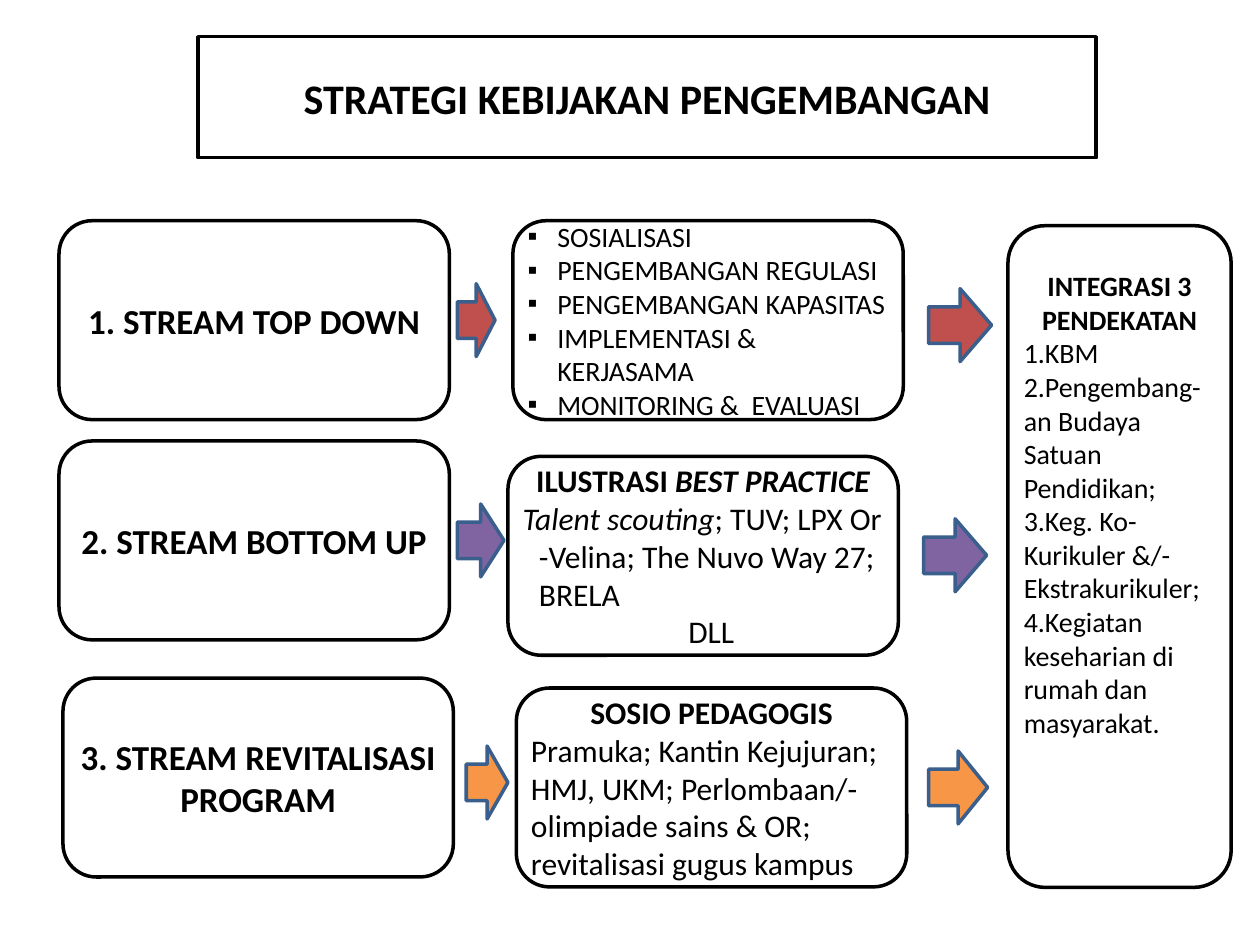
from lxml.etree import SubElement
from pptx import Presentation
from pptx.dml.color import RGBColor
from pptx.enum.shapes import MSO_SHAPE
from pptx.enum.text import MSO_ANCHOR, PP_ALIGN
from pptx.oxml.ns import qn
from pptx.util import Cm, Pt


def paint(s, fill, line):
    s.fill.solid()
    s.fill.fore_color.rgb = RGBColor.from_string(fill)
    s.line.color.rgb = RGBColor.from_string(line)
    s.line.width = Pt(2)


def write(s, size, paras):
    """Each paragraph is (alignment, [(text, style)]), style made of b and i."""
    tf = s.text_frame
    tf.word_wrap = True
    tf.vertical_anchor = MSO_ANCHOR.MIDDLE
    tf.margin_left = tf.margin_right = Cm(0.1)
    tf.margin_top = tf.margin_bottom = Cm(0.05)
    for n, (align, runs) in enumerate(paras):
        p = tf.paragraphs[0] if n == 0 else tf.add_paragraph()
        p.alignment = align
        for text, style in runs:
            r = p.add_run()
            r.text = text
            r.font.name = "Calibri"
            r.font.size = Pt(size)
            r.font.bold = "b" in style
            r.font.italic = "i" in style
            r.font.color.rgb = RGBColor.from_string("000000")
    return tf


C, L = PP_ALIGN.CENTER, PP_ALIGN.LEFT

prs = Presentation()
prs.slide_width, prs.slide_height = Cm(25.4), Cm(19.05)
slide = prs.slides.add_slide(prs.slide_layouts[5])

# Title in a rounded frame
title = slide.shapes.title
title.left, title.top, title.width, title.height = Cm(3.99), Cm(0.74), Cm(18.11), Cm(2.44)
geom = SubElement(title._element.spPr, qn("a:prstGeom"), prst="roundRect")
SubElement(geom, qn("a:avLst"))
paint(title, "FFFFFF", "000000")
write(title, 24, [(C, [("STRATEGI KEBIJAKAN PENGEMBANGAN", "b")])])

# Boxes: left, top, width, height, text size, paragraphs
W, H = 7.87, 4.01
boxes = [
    (1.19, 4.45, W, H, 20, [(C, [("1. STREAM TOP DOWN", "b")])]),
    (1.19, 8.89, W, H, 20, [(C, [("2. STREAM BOTTOM UP", "b")])]),
    (1.27, 13.67, W, H, 20, [(C, [("3. STREAM REVITALISASI PROGRAM", "b")])]),
    (10.34, 4.45, W, H, 16, [(L, [(item, "")]) for item in (
        "SOSIALISASI", "PENGEMBANGAN REGULASI", "PENGEMBANGAN KAPASITAS",
        "IMPLEMENTASI & KERJASAMA", "MONITORING &  EVALUASI")]),
    (10.24, 9.2, W, H, 18, [
        (C, [("ILUSTRASI ", "b"), ("BEST PRACTICE", "bi")]),
        (L, [("Talent scouting", "i"),
             ("; TUV; LPX Or -Velina; The Nuvo Way 27; BRELA", "")]),
        (C, [("DLL", "")])]),
    (10.41, 13.87, W, H, 18, [
        (C, [("SOSIO PEDAGOGIS", "b")]),
        (L, [("Pramuka; Kantin Kejujuran; HMJ, UKM; Perlombaan/-olimpiade "
              "sains & OR; revitalisasi gugus kampus", "")])]),
    (20.32, 4.55, 4.5, 13.34, 16, [
        (C, [("INTEGRASI 3 PENDEKATAN", "b")]),
        (L, [("1.KBM", "")]),
        (L, [("2.Pengembang-an Budaya Satuan Pendidikan;", "")]),
        (L, [("3.Keg. Ko-Kurikuler &/-Ekstrakurikuler;", "")]),
        (L, [("4.Kegiatan keseharian di rumah dan masyarakat.", "")])]),
]
frames = []
for x, y, w, h, size, paras in boxes:
    s = slide.shapes.add_shape(MSO_SHAPE.ROUNDED_RECTANGLE, Cm(x), Cm(y), Cm(w), Cm(h))
    s.shadow.inherit = False
    paint(s, "FFFFFF", "000000")
    frames.append(write(s, size, paras))
bullets, practice, approach = frames[3], frames[4], frames[6]

# Square bullets
for p in bullets.paragraphs:
    pPr = p._p.get_or_add_pPr()
    pPr.set("marL", str(Cm(0.6)))
    pPr.set("indent", str(-Cm(0.6)))
    SubElement(pPr, qn("a:buFont"), typeface="Arial")
    SubElement(pPr, qn("a:buChar"), char="▪")

# Hanging indent under the best practice heading
for p, indent in zip(practice.paragraphs[1:], (-0.33, 0)):
    pPr = p._p.get_or_add_pPr()
    pPr.set("marL", str(Cm(0.33)))
    pPr.set("indent", str(Cm(indent)))

# The tall box reads from the top
approach.vertical_anchor = MSO_ANCHOR.TOP
approach.margin_top = Cm(0.65)

# Arrows: left, top, width, fill
RED, PURPLE, ORANGE = "C0504D", "8064A2", "F79646"
for x, y, w, color in [
    (9.22, 5.72, 0.76, RED), (9.22, 10.16, 0.94, PURPLE), (9.4, 15.04, 0.84, ORANGE),
    (18.72, 5.82, 1.27, RED), (18.62, 10.46, 1.27, PURPLE), (18.72, 15.14, 1.19, ORANGE),
]:
    s = slide.shapes.add_shape(MSO_SHAPE.RIGHT_ARROW, Cm(x), Cm(y), Cm(w), Cm(1.47))
    s.shadow.inherit = False
    paint(s, color, "3A5F8C")

prs.save("out.pptx")
